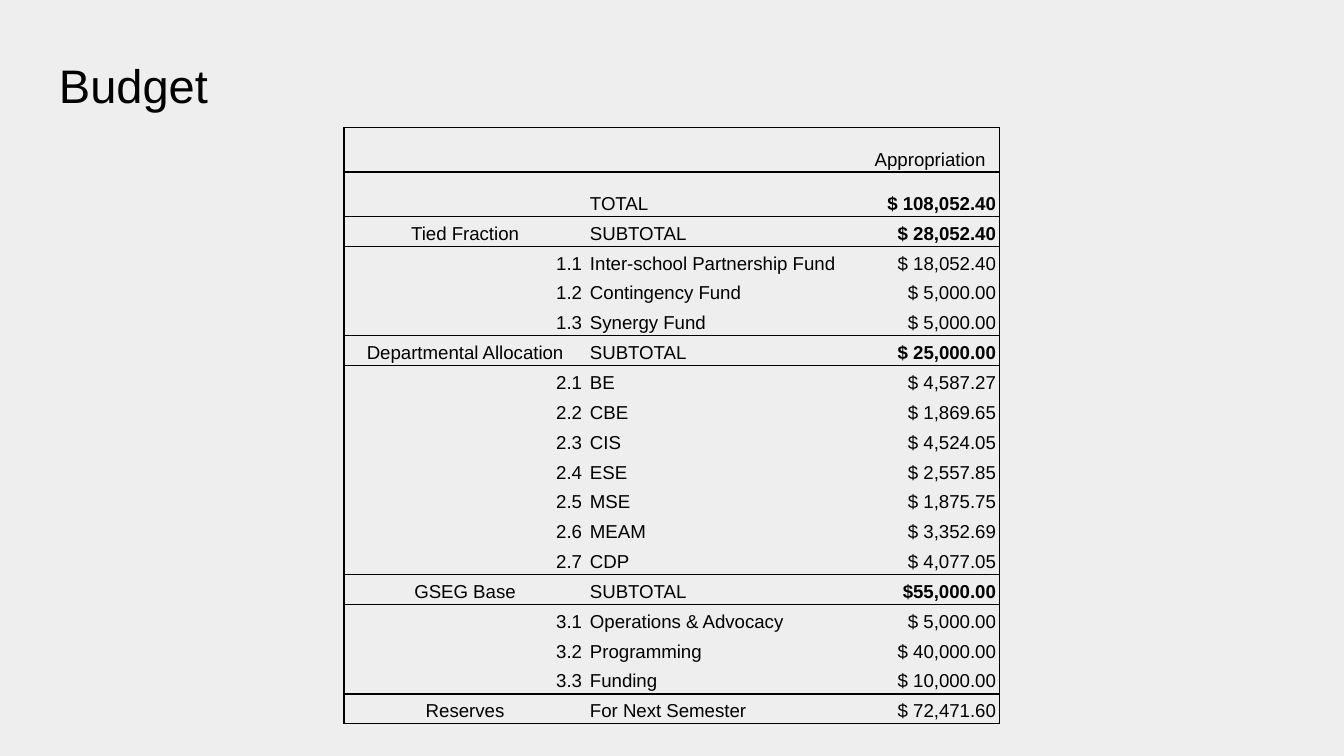
import pptx
import pptx.util
import pptx.dml.color
import pptx.enum.text
import lxml.etree

COLORS = {"page": "EEEEEE", "ink": "000000"}
FONT = "Arial"
WIDTH = 10
HEIGHT = WIDTH * 9 / 16
COLUMNS = [1.8, 2.04, 1.04]
ROW = 0.22
FRAME_SIDE = 3.28
PLAIN_STYLE = "{2D5ABB26-0587-4C30-8999-92F81FD0307C}"
ALIGN = pptx.enum.text.PP_ALIGN
ANCHOR = pptx.enum.text.MSO_ANCHOR
inches = pptx.util.Inches

BUDGET = [
    ("", "", "Appropriation"),
    ("", "TOTAL", "$ 108,052.40"),
    ("Tied Fraction", "SUBTOTAL", "$ 28,052.40"),
    ("1.1", "Inter-school Partnership Fund", "$ 18,052.40"),
    ("1.2", "Contingency Fund", "$ 5,000.00"),
    ("1.3", "Synergy Fund", "$ 5,000.00"),
    ("Departmental Allocation", "SUBTOTAL", "$ 25,000.00"),
    ("2.1", "BE", "$ 4,587.27"),
    ("2.2", "CBE", "$ 1,869.65"),
    ("2.3", "CIS", "$ 4,524.05"),
    ("2.4", "ESE", "$ 2,557.85"),
    ("2.5", "MSE", "$ 1,875.75"),
    ("2.6", "MEAM", "$ 3,352.69"),
    ("2.7", "CDP", "$ 4,077.05"),
    ("GSEG Base", "SUBTOTAL", "$55,000.00"),
    ("3.1", "Operations & Advocacy", "$ 5,000.00"),
    ("3.2", "Programming", "$ 40,000.00"),
    ("3.3", "Funding", "$ 10,000.00"),
    ("Reserves", "For Next Semester", "$ 72,471.60"),
]


def style_text(para, size, bold=False):
    for span in para.runs:
        span.font.name = FONT
        span.font.size = pptx.util.Pt(size)
        span.font.bold = bold
        span.font.color.rgb = pptx.dml.color.RGBColor.from_string(COLORS["ink"])


def draw_border(cell, side):
    namespace = pptx.oxml.ns.nsdecls("a")
    line = pptx.oxml.parse_xml(
        f'<a:{side} {namespace} w="9525"><a:solidFill>'
        f'<a:srgbClr val="{COLORS["ink"]}"/></a:solidFill></a:{side}>'
    )
    properties = cell._tc.get_or_add_tcPr()
    borders = [child for child in properties if lxml.etree.QName(child).localname.startswith("ln")]
    properties.insert(len(borders), line)


deck = pptx.Presentation()
deck.slide_width = inches(WIDTH)
deck.slide_height = inches(HEIGHT)
page = deck.slides.add_slide(deck.slide_layouts[6])
page.background.fill.solid()
page.background.fill.fore_color.rgb = pptx.dml.color.RGBColor.from_string(COLORS["page"])

margin = 0.34
title = page.shapes.add_textbox(inches(margin), inches(0.32), inches(WIDTH - 2 * margin), inches(0.63))
title.text_frame.word_wrap = True
title.text_frame.vertical_anchor = ANCHOR.TOP
title.text_frame.margin_top = title.text_frame.margin_bottom = inches(0.1)
title.text_frame.margin_left = title.text_frame.margin_right = inches(0.1)
title.text_frame.text = "Budget"
style_text(title.text_frame.paragraphs[0], 25.2)

frame = page.shapes.add_table(
    len(BUDGET), len(COLUMNS), inches((WIDTH - sum(COLUMNS)) / 2), inches(0.95),
    inches(FRAME_SIDE), inches(FRAME_SIDE),
)
table = frame.table
table.first_row = False
table.horz_banding = False
table._tbl.tblPr.find(pptx.oxml.ns.qn("a:tableStyleId")).text = PLAIN_STYLE
for column, width in zip(table.columns, COLUMNS):
    column.width = inches(width)
for row in table.rows:
    row.height = inches(ROW)
frame.width = frame.height = inches(FRAME_SIDE)

is_heading = [not label[:1].isdigit() for label, name, amount in BUDGET]
last_row, last_column = len(BUDGET) - 1, len(COLUMNS) - 1
for row_index, entry in enumerate(BUDGET):
    heading = is_heading[row_index]
    label_align = ALIGN.CENTER if heading else ALIGN.RIGHT
    amount_align = ALIGN.CENTER if row_index == 0 else ALIGN.RIGHT
    for column_index, text in enumerate(entry):
        cell = table.cell(row_index, column_index)
        cell.fill.background()
        cell.vertical_anchor = ANCHOR.BOTTOM
        cell.margin_left = cell.margin_right = inches(0.03)
        cell.margin_top = cell.margin_bottom = pptx.util.Pt(1.1)
        if text:
            para = cell.text_frame.paragraphs[0]
            para.text = text
            para.alignment = [label_align, ALIGN.LEFT, amount_align][column_index]
            para.line_spacing = 1.15
            style_text(para, 10, column_index == last_column and entry[1].endswith("TOTAL"))
        if column_index == 0:
            draw_border(cell, "lnL")
        if column_index == last_column:
            draw_border(cell, "lnR")
        if heading:
            draw_border(cell, "lnT")
        if row_index == last_row or is_heading[row_index + 1]:
            draw_border(cell, "lnB")

deck.save("out.pptx")
